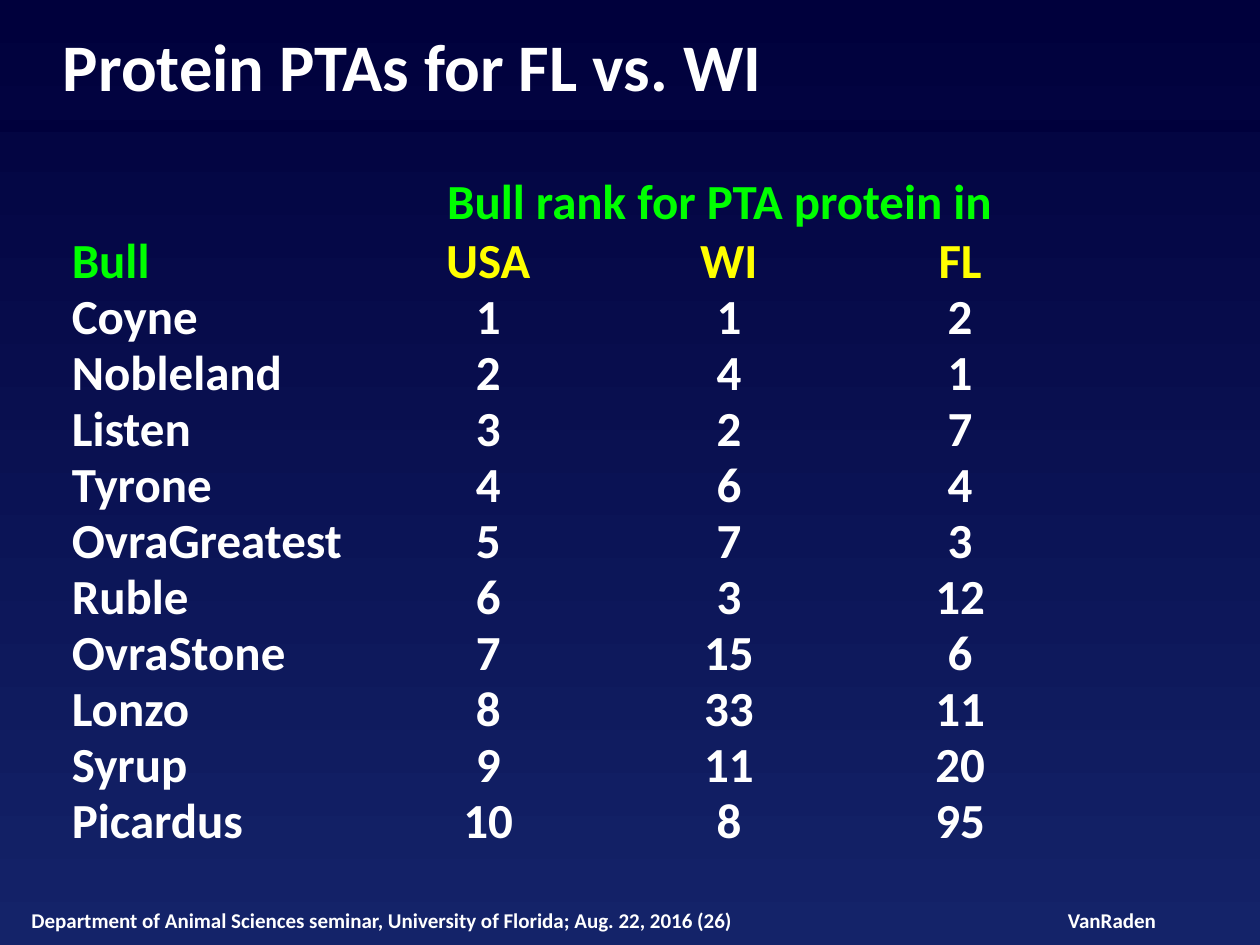
import pptx
import pptx.dml.color
import pptx.enum.shapes
import pptx.enum.text
import pptx.oxml.ns
import pptx.util
from lxml import etree

Inches = pptx.util.Inches
Pt = pptx.util.Pt
RGBColor = pptx.dml.color.RGBColor
ALIGN = pptx.enum.text.PP_ALIGN
ANCHOR = pptx.enum.text.MSO_ANCHOR

NAVY = RGBColor(0x00, 0x00, 0x3C)
BLUE = RGBColor(0x14, 0x23, 0x69)
WHITE = RGBColor(0xFF, 0xFF, 0xFF)
GREEN = RGBColor(0x00, 0xFF, 0x00)
YELLOW = RGBColor(0xFF, 0xFF, 0x00)

FONT = "Calibri"
NO_GRID_STYLE = "{2D5ABB26-0587-4C30-8999-92F81FD0307C}"
COLUMN_WIDTHS = (2.95, 0.71, 3.11, 0.56)
HEADER_HEIGHT = 0.47
ROW_HEIGHT = 0.44
SPANNING_HEADER = "Bull rank for PTA protein in"
COLUMN_HEADERS = ("Bull", "USA", "WI", "FL")
BULL_RANKS = (
    ("Coyne", 1, 1, 2),
    ("Nobleland", 2, 4, 1),
    ("Listen", 3, 2, 7),
    ("Tyrone", 4, 6, 4),
    ("OvraGreatest", 5, 7, 3),
    ("Ruble", 6, 3, 12),
    ("OvraStone", 7, 15, 6),
    ("Lonzo", 8, 33, 11),
    ("Syrup", 9, 11, 20),
    ("Picardus", 10, 8, 95),
)


def style_text(para, size, color, align=ALIGN.LEFT):
    """Format every run of a paragraph in the bold deck font."""
    para.alignment = align
    for span in para.runs:
        span.font.name = FONT
        span.font.size = Pt(size)
        span.font.bold = True
        span.font.color.rgb = color


def add_label(page, left, top, width, height, text, size,
              align=ALIGN.LEFT, anchor=ANCHOR.MIDDLE, wrap=True):
    """Add a white text box without insets."""
    box = page.shapes.add_textbox(Inches(left), Inches(top), Inches(width), Inches(height))
    frame = box.text_frame
    frame.margin_left = frame.margin_right = frame.margin_top = frame.margin_bottom = 0
    frame.word_wrap = wrap
    frame.auto_size = pptx.enum.text.MSO_AUTO_SIZE.SHAPE_TO_FIT_TEXT
    frame.vertical_anchor = anchor
    frame.text = text
    style_text(frame.paragraphs[0], size, WHITE, align)


def paint_background(page):
    """Fill the page with a gradient running from top to bottom."""
    fill = page.background.fill
    fill.gradient()
    fill.gradient_angle = 270
    for stop, color, position in zip(fill.gradient_stops, (NAVY, BLUE), (0, 1)):
        stop.color.rgb = color
        stop.position = position


def add_heading(page, left, top, width, height):
    """Add the title and the rule across the page below it."""
    rule_top = Inches(top + 0.8)
    rule = page.shapes.add_connector(
        pptx.enum.shapes.MSO_CONNECTOR.STRAIGHT, 0, rule_top, Inches(10), rule_top)
    rule.line.color.rgb = NAVY
    rule.line.width = Pt(6.5)
    etree.SubElement(rule._element.spPr, pptx.oxml.ns.qn("a:effectLst"))
    add_label(page, left, top, width, height, "Protein PTAs for FL vs. WI", 38,
              anchor=ANCHOR.TOP)


def add_footer(page, left, top, height):
    """Add the seminar line on the left and the speaker on the right."""
    add_label(page, left, top, 6.17, height,
              "Department of Animal Sciences seminar, University of Florida; Aug. 22, 2016 (26)", 12)
    add_label(page, left + 8.22, top, 0.71, height, "VanRaden", 12, ALIGN.CENTER, wrap=False)


def fill_cell(cell, text, color, align):
    """Write one table cell without insets or fill."""
    cell.margin_left = cell.margin_right = cell.margin_top = cell.margin_bottom = 0
    cell.fill.background()
    if text:
        cell.text_frame.text = text
        para = cell.text_frame.paragraphs[0]
        para.line_spacing = Pt(32)
        style_text(para, 28, color, align)


def add_rank_table(page, left, top):
    """Add the table of bull ranks by location."""
    rows = (("", SPANNING_HEADER, "", ""), COLUMN_HEADERS) + BULL_RANKS
    heights = [HEADER_HEIGHT] + [ROW_HEIGHT] * (len(rows) - 1)
    holder = page.shapes.add_table(
        len(rows), len(COLUMN_WIDTHS), Inches(left), Inches(top),
        Inches(sum(COLUMN_WIDTHS)), Inches(sum(heights)))
    table = holder.table
    table.first_row = table.horz_banding = False
    table._tbl.tblPr.find(pptx.oxml.ns.qn("a:tableStyleId")).text = NO_GRID_STYLE
    for column, width in zip(table.columns, COLUMN_WIDTHS):
        column.width = Inches(width)
    for row, height in zip(table.rows, heights):
        row.height = Inches(height)
    table.cell(0, 1).merge(table.cell(0, 3))
    for r, values in enumerate(rows):
        for c, value in enumerate(values):
            if r == 0 or (r == 1 and c == 0):
                color = GREEN
            else:
                color = YELLOW if r == 1 else WHITE
            align = ALIGN.CENTER if c else ALIGN.LEFT
            fill_cell(table.cell(r, c), str(value), color, align)


def main():
    """Build the slide and save it."""
    deck = pptx.Presentation()
    deck.slide_width = Inches(10)
    deck.slide_height = Inches(7.5)
    page = deck.slides.add_slide(deck.slide_layouts[6])
    paint_background(page)
    add_footer(page, 0.25, 7.2, 0.2)
    add_heading(page, 0.5, 0.2, 9, 0.64)
    add_rank_table(page, 0.57, 1.4)
    deck.save("out.pptx")


if __name__ == "__main__":
    main()
